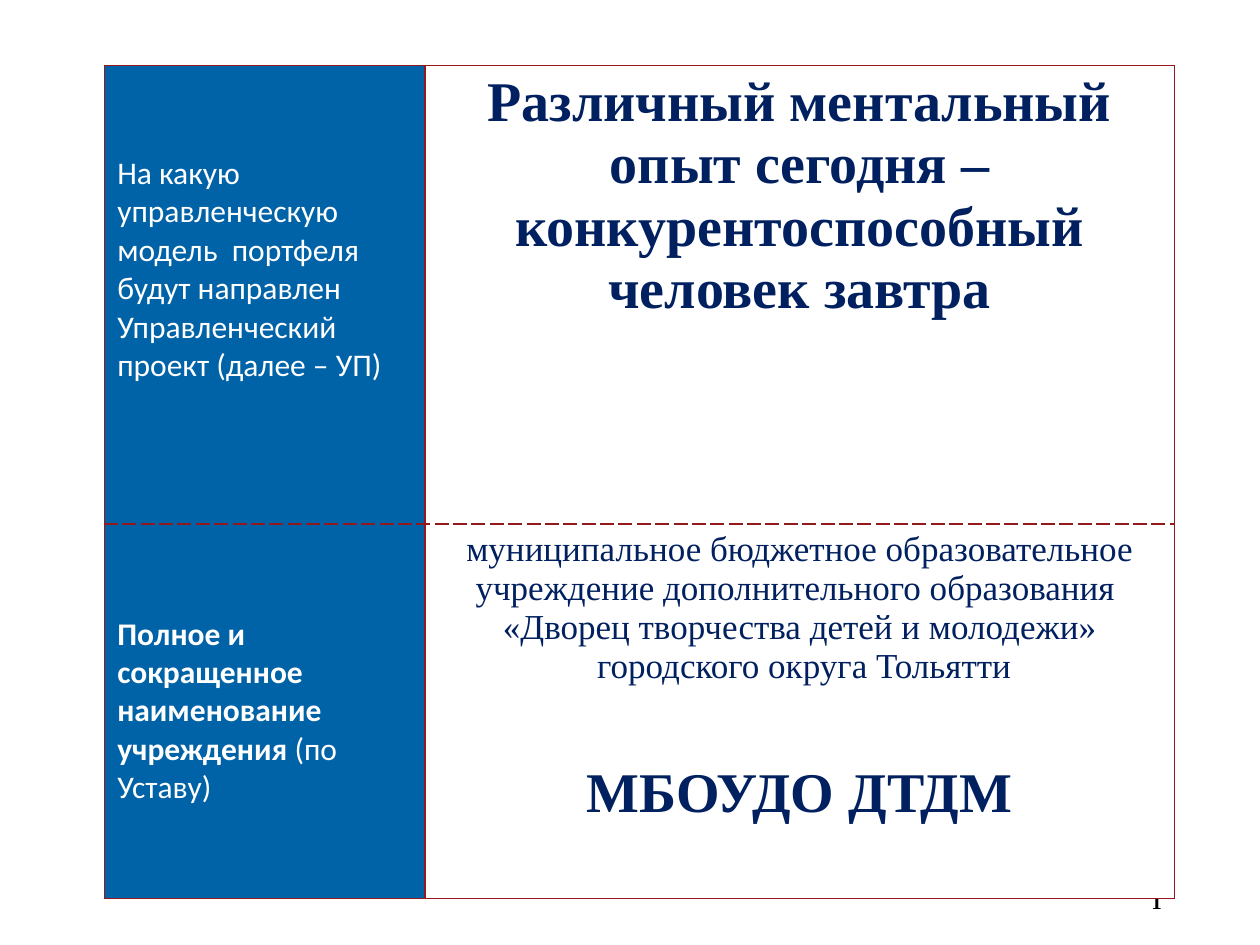
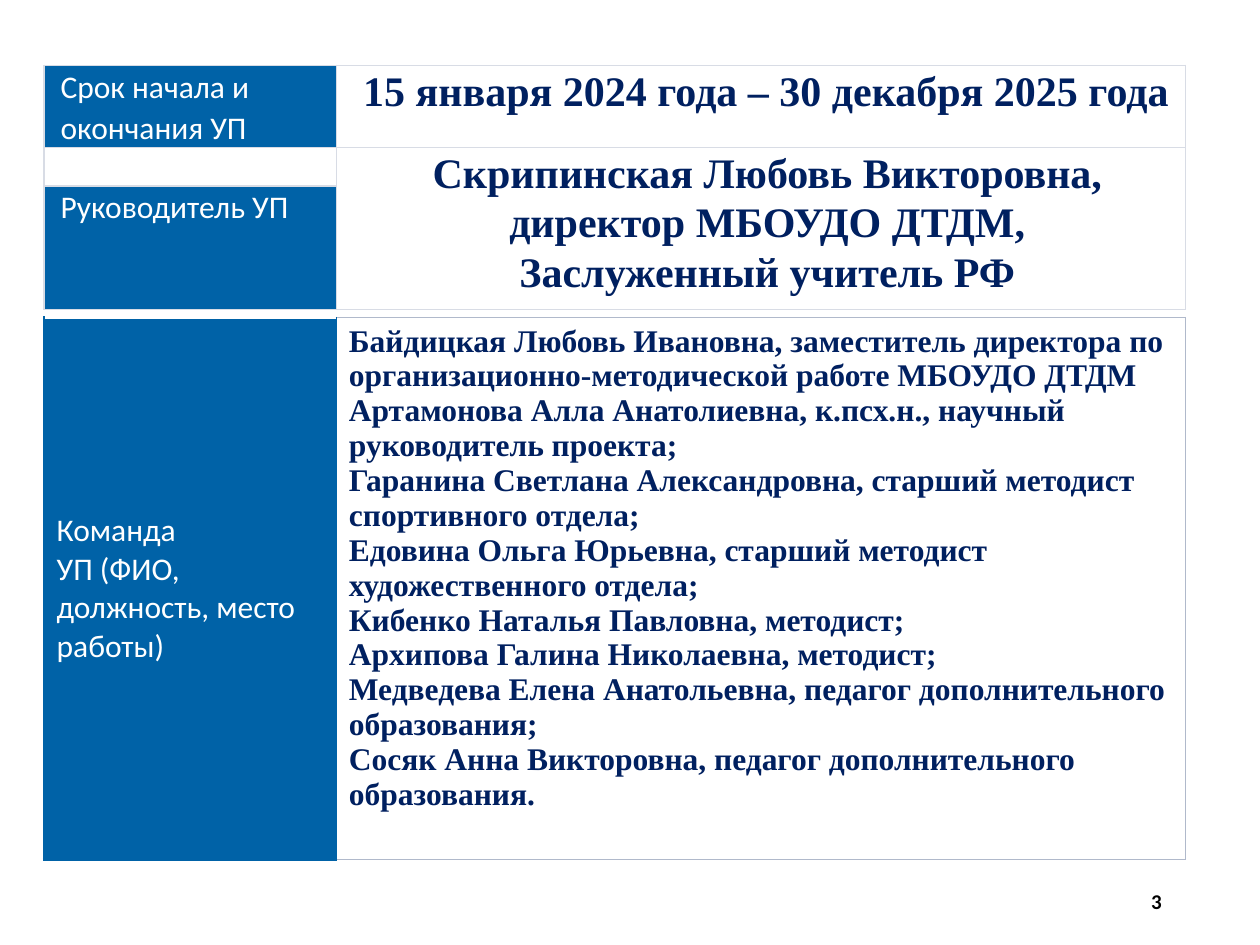
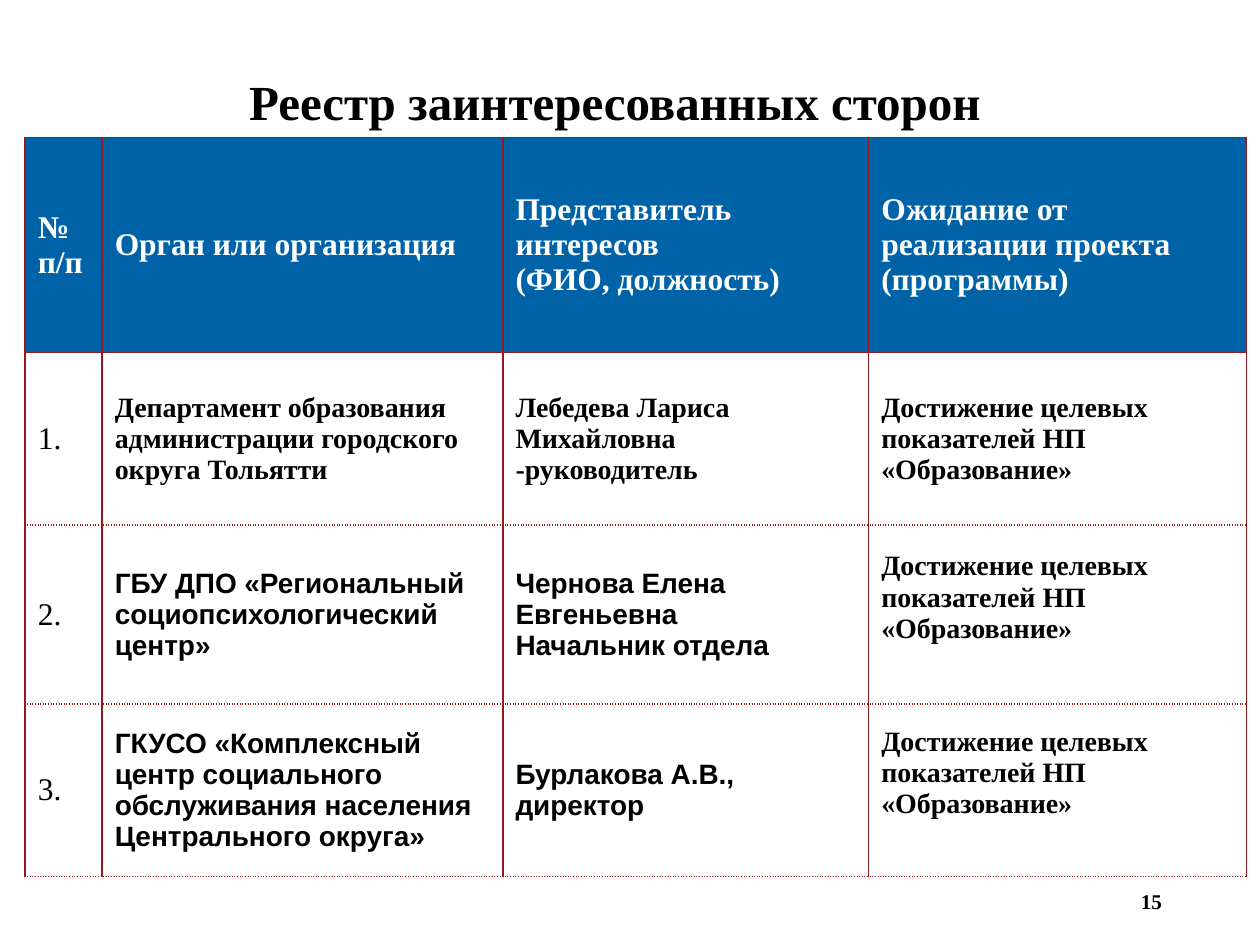
from lxml import etree
from pptx import Presentation
from pptx.dml.color import RGBColor
from pptx.enum.text import MSO_ANCHOR, PP_ALIGN
from pptx.oxml.ns import qn
from pptx.util import Pt

TOP, MIDDLE, BOTTOM = MSO_ANCHOR.TOP, MSO_ANCHOR.MIDDLE, MSO_ANCHOR.BOTTOM
LEFT, CENTER, RIGHT = PP_ALIGN.LEFT, PP_ALIGN.CENTER, PP_ALIGN.RIGHT
BLUE = RGBColor(0x00, 0x62, 0xA7)
NAVY = RGBColor(0x00, 0x20, 0x60)
RED = RGBColor(0x92, 0x1A, 0x1D)
PALE = RGBColor(0xD8, 0xDC, 0xE5)
GRAY = RGBColor(0xB0, 0xB9, 0xCB)
WHITE = RGBColor(0xFF, 0xFF, 0xFF)
BLACK = RGBColor(0x00, 0x00, 0x00)
SERIF, SANS, ARIAL = "Times New Roman", "Calibri", "Arial"
TITLE_ONLY, BLANK = 5, 6


def add_grid(slide, left, top, widths, heights):
    frame = slide.shapes.add_table(len(heights), len(widths), Pt(left), Pt(top),
                                   Pt(sum(widths)), Pt(sum(heights)))
    table = frame.table
    table.first_row = table.horz_banding = False
    for column, width in zip(table.columns, widths):
        column.width = Pt(width)
    for row, height in zip(table.rows, heights):
        row.height = Pt(height)
    return table


def fill_cell(cell, text, font, size, color, fill, borders, bold=False,
              align=LEFT, anchor=MIDDLE, spacing=None):
    properties = cell._tc.get_or_add_tcPr()
    for side, (line_color, width, dash) in zip("LRTB", borders):
        line = etree.SubElement(properties, qn("a:ln" + side), w=str(Pt(width)))
        solid = etree.SubElement(line, qn("a:solidFill"))
        etree.SubElement(solid, qn("a:srgbClr"), val=str(line_color))
        etree.SubElement(line, qn("a:prstDash"), val=dash)
    cell.fill.solid()
    cell.fill.fore_color.rgb = fill
    cell.vertical_anchor = anchor
    cell.text_frame.text = text
    for para in cell.text_frame.paragraphs:
        para.alignment = align
        if spacing:
            para.line_spacing = spacing
        for span in para.runs:
            span.font.name = font
            span.font.size = Pt(size)
            span.font.bold = bold
            span.font.color.rgb = color


deck = Presentation()
deck.slide_width, deck.slide_height = Pt(720), Pt(540)

pages = []
for number, font, layout in (("1", SERIF, BLANK), ("3", SANS, BLANK), ("15", SERIF, TITLE_ONLY)):
    page = deck.slides.add_slide(deck.slide_layouts[layout])
    box = page.shapes.add_textbox(Pt(509), Pt(500.4), Pt(162), Pt(28.8))
    box.text_frame.word_wrap = True
    box.text_frame.vertical_anchor = MIDDLE
    para = box.text_frame.paragraphs[0]
    para.text = number
    para.alignment = RIGHT
    para.font.name = font
    para.runs[0].font.name = font
    para.runs[0].font.size = Pt(12)
    para.runs[0].font.bold = True
    para.runs[0].font.color.rgb = BLACK
    pages.append(page)
passport_page, team_page, register_page = pages

red, red_dash, red_dot = (RED, 1, "solid"), (RED, 1, "sysDash"), (RED, 1, "sysDot")

passport = add_grid(passport_page, 59.8, 37.4, (183, 428.4), (262, 214))
upper = (red, red, red, red_dash)
lower = (red, red, red_dash, red)
model_label, model, name_label, name = passport.iter_cells()
fill_cell(model_label, "На какую управленческую модель  портфеля будут направлен "
          "Управленческий проект (далее – УП)", SANS, 18, WHITE, BLUE, upper)
fill_cell(model, "Различный ментальный опыт сегодня – конкурентоспособный человек завтра",
          SERIF, 32, NAVY, WHITE, upper, True, CENTER, TOP)
fill_cell(name_label, "Полное и сокращенное наименование учреждения",
          SANS, 18, WHITE, BLUE, lower, True)
fill_cell(name, "муниципальное бюджетное образовательное учреждение дополнительного образования \n"
          "«Дворец творчества детей и молодежи»\n городского округа Тольятти\nМБОУДО ДТДМ",
          SERIF, 20, NAVY, WHITE, lower, False, CENTER, TOP)
for label in (model_label, name_label):
    label.text_frame.paragraphs[0].space_before = Pt(12)
    label.text_frame.paragraphs[0].space_after = Pt(12)
model_label.margin_bottom = Pt(32)
span = name_label.text_frame.paragraphs[0].add_run()
span.text = " (по Уставу)"
span.font.name = SANS
span.font.size = Pt(18)
span.font.bold = False
span.font.color.rgb = WHITE
short_name = name.text_frame.paragraphs[-1]
short_name.space_before = Pt(44)
short_name.runs[0].font.size = Pt(32)
short_name.runs[0].font.bold = True

schedule = add_grid(team_page, 25.2, 37.4, (167, 485.3), (47, 21.8, 63.4))
pale = ((PALE, 1, "solid"),) * 4
for row, text, fill in ((0, "Срок начала и окончания УП", BLUE), (1, "", WHITE),
                        (2, "Руководитель УП", BLUE)):
    fill_cell(schedule.cell(row, 0), text, SANS, 18, WHITE, fill, pale, anchor=TOP, spacing=1.07)
schedule.cell(1, 1).merge(schedule.cell(2, 1))
for row, text, align in (
        (0, " 15 января 2024 года – 30 декабря 2025 года", LEFT),
        (1, "Скрипинская Любовь Викторовна,\n директор МБОУДО ДТДМ, \nЗаслуженный учитель РФ", CENTER),
        (2, "", CENTER)):
    fill_cell(schedule.cell(row, 1), text, SERIF, 24, NAVY, WHITE, pale, True, align, TOP, 1.07)
for cell in schedule.iter_cells():
    cell.margin_left, cell.margin_right = Pt(9.4), Pt(2.2)
    cell.margin_top = cell.margin_bottom = 0

team = add_grid(team_page, 25.2, 181.5, (167, 485.3), (306.5,))
blue, gray = (BLUE, 1, "solid"), (GRAY, 1, "solid")
blue_thick, white_thick = (BLUE, 1.5, "solid"), (WHITE, 1.5, "solid")
members = (
    "Байдицкая Любовь Ивановна, заместитель директора по организационно-методической работе МБОУДО ДТДМ",
    "Артамонова Алла Анатолиевна, к.псх.н., научный руководитель проекта;",
    "Гаранина Светлана Александровна, старший методист спортивного отдела;",
    "Едовина Ольга Юрьевна, старший методист художественного отдела;",
    "Кибенко Наталья Павловна, методист;",
    "Архипова Галина Николаевна, методист;",
    "Медведева Елена Анатольевна, педагог дополнительного образования;",
    "Сосяк Анна Викторовна, педагог дополнительного образования.",
)
fill_cell(team.cell(0, 0), "Команда\nУП (ФИО,  должность, место работы)", SANS, 18, WHITE, BLUE,
          (blue_thick, blue, white_thick, blue_thick))
fill_cell(team.cell(0, 1), "\n".join(members), SERIF, 18, NAVY, WHITE,
          (blue, gray, gray, gray), True, anchor=TOP)

title = register_page.shapes.title
title.left, title.top, title.width, title.height = Pt(26.6), Pt(35.3), Pt(656.6), Pt(43.2)
title.text_frame.text = "Реестр заинтересованных сторон "
title.text_frame.vertical_anchor = BOTTOM
para = title.text_frame.paragraphs[0]
para.alignment = CENTER
para.line_spacing = 0.9
para.runs[0].font.name = SERIF
para.runs[0].font.size = Pt(28)
para.runs[0].font.bold = True
para.runs[0].font.color.rgb = BLACK

register = add_grid(register_page, 14.4, 78.5, (44, 229, 209, 216), (123, 98.6, 102.2, 98.6))
headings = ("№\nп/п", "Орган или организация", "Представитель интересов\v(ФИО, должность)",
            "Ожидание от реализации проекта (программы)")
for column, heading in enumerate(headings):
    fill_cell(register.cell(0, column), heading, SERIF, 18, WHITE, BLUE, (red,) * 4, True)

parties = (
    ("Департамент образования администрации городского округа Тольятти",
     "Лебедева Лариса Михайловна  -руководитель", SERIF),
    ("ГБУ ДПО «Региональный социопсихологический центр»",
     "Чернова Елена Евгеньевна\nНачальник отдела", ARIAL),
    ("ГКУСО «Комплексный центр социального обслуживания населения Центрального округа»",
     "Бурлакова А.В., директор", ARIAL),
)
for row, (organization, person, font) in enumerate(parties, 1):
    borders = (red, red, red if row == 1 else red_dot, red_dot)
    fill_cell(register.cell(row, 0), f"{row}.", SERIF, 18, BLACK, WHITE, borders)
    fill_cell(register.cell(row, 1), organization, font, 16, BLACK, WHITE, borders, True)
    fill_cell(register.cell(row, 2), person, font, 16, BLACK, WHITE, borders, True)
    fill_cell(register.cell(row, 3), "Достижение целевых показателей НП «Образование»",
              SERIF, 16, BLACK, WHITE, borders, True)
    if row > 1:
        register.cell(row, 3).margin_bottom = Pt(23)

deck.save("out.pptx")
